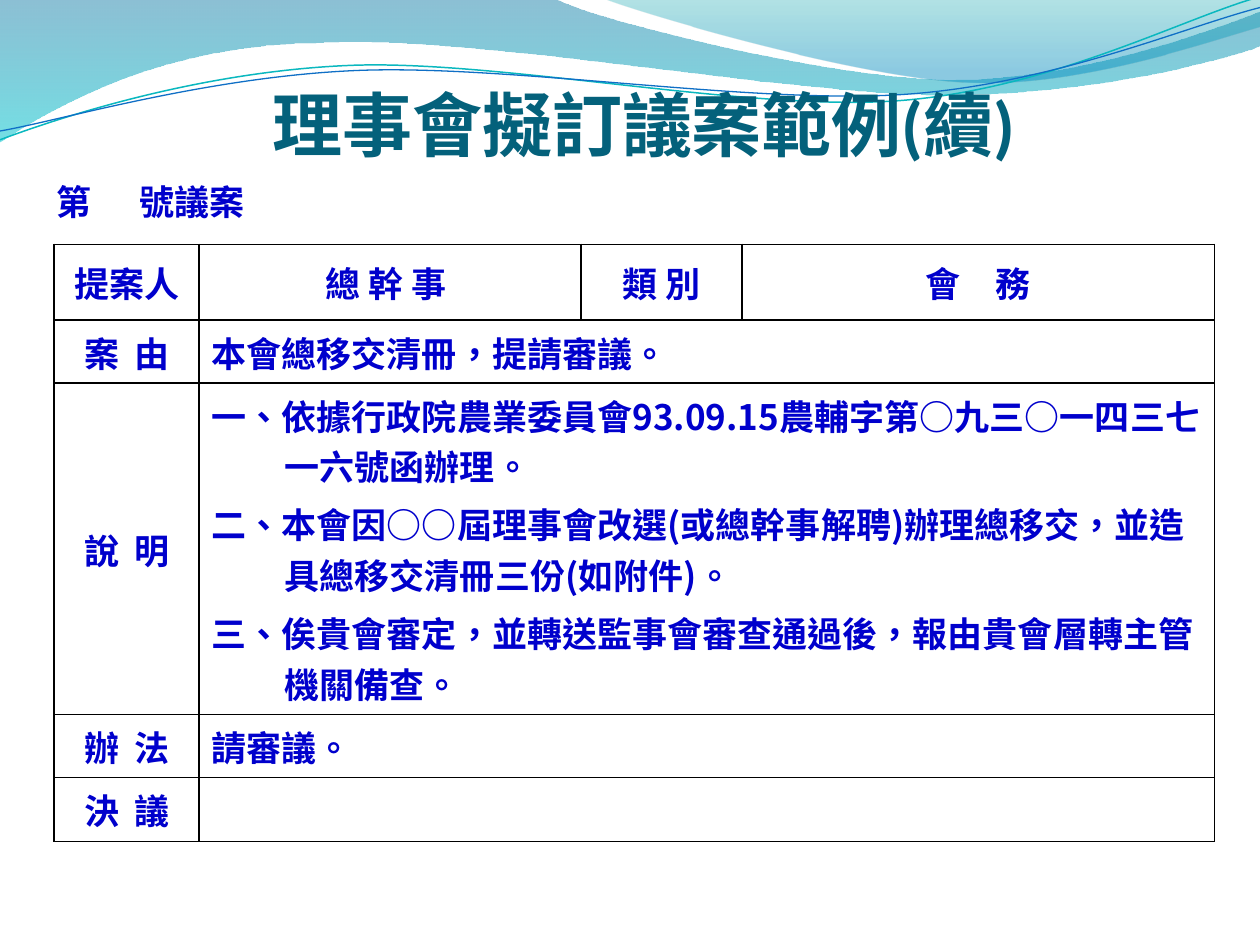
"""Build the slide with a sample board proposal form under a wave banner."""
from lxml import etree
from pptx import Presentation, util as u
from pptx.dml.color import RGBColor
from pptx.enum import text
from pptx.oxml.ns import qn

INK = RGBColor(0x00, 0x00, 0xCC)
TITLE = RGBColor(0x04, 0x61, 0x7B)
BLACK = RGBColor(0x00, 0x00, 0x00)
DEEP = RGBColor(0x00, 0x74, 0xA1)
AQUA = RGBColor(0x00, 0xC6, 0xCF)
TEAL = RGBColor(0x00, 0xA1, 0xA9)
AZURE = RGBColor(0x00, 0x8B, 0xBF)
TEAL_LINE = RGBColor(0x0A, 0xB8, 0xBF)
BLUE_LINE = RGBColor(0x0F, 0x6F, 0xC6)
CJK = "Noto Sans CJK SC"

WAVES = [
    ([(0, -0.01), (4.4, -0.01), (4.76, 0.17, 6.64, 0.63, 7.58, 0.63),
      (8.53, 0.63, 9.58, 0.26, 10, 0.09), (10.01, 0.36),
      (9.83, 0.44, 8.7, 0.76, 7.46, 0.75), (6.22, 0.75, 3.82, 0.28, 2.57, 0.34),
      (1.29, 0.35, 0.46, 0.83, -0.01, 1.13)],
     [(0, DEEP, 45), (1, AQUA, 55)]),
    ([(4.79, -0.01), (5.09, 0.11, 6.82, 0.62, 7.69, 0.65),
      (8.56, 0.69, 9.61, 0.32, 10, 0.21), (10, 0)],
     [(0, TEAL, 30), (0.8, AZURE, 45)]),
]
STROKES = [
    ([(0, 1.11), (0.48, 0.93, 1.58, 0.57, 2.77, 0.52),
      (3.95, 0.47, 5.93, 0.89, 7.13, 0.8), (8.33, 0.71, 9.38, 0.15, 9.98, -0.02)],
     TEAL_LINE, 0.85),
    ([(0, 1.04), (0.47, 0.96, 1.64, 0.61, 2.83, 0.56),
      (4.03, 0.51, 5.97, 0.83, 7.17, 0.75), (8.36, 0.67, 9.41, 0.21, 10, 0.06)],
     BLUE_LINE, 0.75),
]
HEADING = "理事會擬訂議案範例(續)"
NUMBER = "第\t號議案"
COLS = [1.15, 3.03, 1.28, 3.75]
ROWS = [0.6, 0.5, 2.63, 0.5, 0.51]
HEADER = ["提案人", "總 幹 事 ", "類 別", "會　務"]
ITEMS = [
    ("案 由", ["本會總移交清冊，提請審議。"], 0),
    ("說 明", [
        "一、依據行政院農業委員會93.09.15農輔字第○九三○一四三七一六號函辦理。",
        "二、本會因○○屆理事會改選(或總幹事解聘)辦理總移交，並造具總移交清冊三份(如附件)。",
        "三、俟貴會審定，並轉送監事會審查通過後，報由貴會層轉主管機關備查。"], 0.58),
    ("辦 法", ["請審議。"], 0.38),
    ("決 議", [], 0),
]


def add_curve(s, path, close):
    """Draw the outline through all points, then bend its six-number segments."""
    points = [(u.Inches(x), u.Inches(y))
              for seg in path for x, y in zip(seg[::2], seg[1::2])]
    builder = s.shapes.build_freeform(*points[0])
    builder.add_line_segments(points[1:], close=close)
    sp = builder.convert_to_shape()
    sp.shadow.inherit = False
    lines = iter(list(sp._element.spPr.iter(qn("a:lnTo"))))
    for seg in path[1:]:
        first = next(lines)
        if len(seg) == 6:
            first.tag = qn("a:cubicBezTo")
            for _ in range(2):
                extra = next(lines)
                first.append(extra[0])
                extra.getparent().remove(extra)
    return sp


def add_wave(s, path, stops):
    sp = add_curve(s, path, True)
    sp.line.fill.background()
    sp.fill.gradient()
    sp.fill.gradient_angle = 270
    for stop, (pos, color, _) in zip(sp.fill.gradient_stops, stops):
        stop.position = pos
        stop.color.rgb = color
    for clr, (_, _, alpha) in zip(sp._element.spPr.iter(qn("a:srgbClr")), stops):
        etree.SubElement(clr, qn("a:alpha")).set("val", str(alpha * 1000))


def add_stroke(s, path, color, width):
    sp = add_curve(s, path, False)
    sp.fill.background()
    sp.line.color.rgb = color
    sp.line.width = u.Pt(width)


def write(tf, lines, hang=0, align=text.PP_ALIGN.LEFT, size=20, font=CJK,
          color=INK, tracking=0):
    tf.text = "\n".join(lines)
    for i, p in enumerate(tf.paragraphs):
        p.alignment = align
        p.space_before = u.Pt(4 if i else 0)
        pPr = p._p.get_or_add_pPr()
        pPr.set("marL", str(u.Inches(hang)))
        pPr.set("indent", str(-u.Inches(hang)))
        for r in p.runs:
            r.font.size, r.font.bold, r.font.name = u.Pt(size), True, font
            r.font.color.rgb = color
            rPr = r._r.get_or_add_rPr()
            rPr.set("lang", "zh-TW")
            rPr.set("spc", str(tracking * 100))
            etree.SubElement(rPr, qn("a:ea")).set("typeface", CJK)


def add_box(s, left, top, width, height):
    tf = s.shapes.add_textbox(*map(u.Inches, (left, top, width, height))).text_frame
    tf.word_wrap = True
    return tf


def frame_cell(cell):
    tcPr = cell._tc.get_or_add_tcPr()
    for side in ("lnL", "lnR", "lnT", "lnB"):
        ln = etree.SubElement(tcPr, qn("a:" + side), w=str(u.Pt(1)))
        fill = etree.SubElement(ln, qn("a:solidFill"))
        etree.SubElement(fill, qn("a:srgbClr"), val=str(BLACK))
    cell.fill.background()


def add_form(s):
    table = s.shapes.add_table(
        len(ROWS), len(COLS),
        *map(u.Inches, (0.43, 1.94, sum(COLS), sum(ROWS)))).table
    table.first_row = table.horz_banding = False
    for col, width in zip(table.columns, COLS):
        col.width = u.Inches(width)
    for row, height in zip(table.rows, ROWS):
        row.height = u.Inches(height)
    for cell in table.iter_cells():
        frame_cell(cell)
        cell.vertical_anchor = text.MSO_ANCHOR.MIDDLE
    center = text.PP_ALIGN.CENTER
    for c, label in enumerate(HEADER):
        write(table.cell(0, c).text_frame, [label], 0.38, center)
    for row, (label, lines, hang) in enumerate(ITEMS, 1):
        write(table.cell(row, 0).text_frame, [label], 0.38, center, tracking=2)
        body = table.cell(row, 1)
        body.merge(table.cell(row, len(COLS) - 1))
        write(body.text_frame, lines, hang)
        if row < 3:
            body.vertical_anchor = text.MSO_ANCHOR.TOP


def main():
    prs = Presentation()
    prs.slide_width, prs.slide_height = u.Inches(10), u.Inches(7.5)
    s = prs.slides.add_slide(prs.slide_layouts[6])
    for wave in WAVES:
        add_wave(s, *wave)
    for stroke in STROKES:
        add_stroke(s, *stroke)
    tf = add_box(s, 0.9, 0.33, 8.42, 0.98)
    tf.margin_left = tf.margin_right = tf.margin_bottom = 0
    tf.vertical_anchor = text.MSO_ANCHOR.BOTTOM
    write(tf, [HEADING], 0, text.PP_ALIGN.CENTER, 40, "Calibri", TITLE)
    add_form(s)
    write(add_box(s, 0.35, 1.38, 9.37, 0.79), [NUMBER], 0.66)
    prs.save("out.pptx")


if __name__ == "__main__":
    main()
